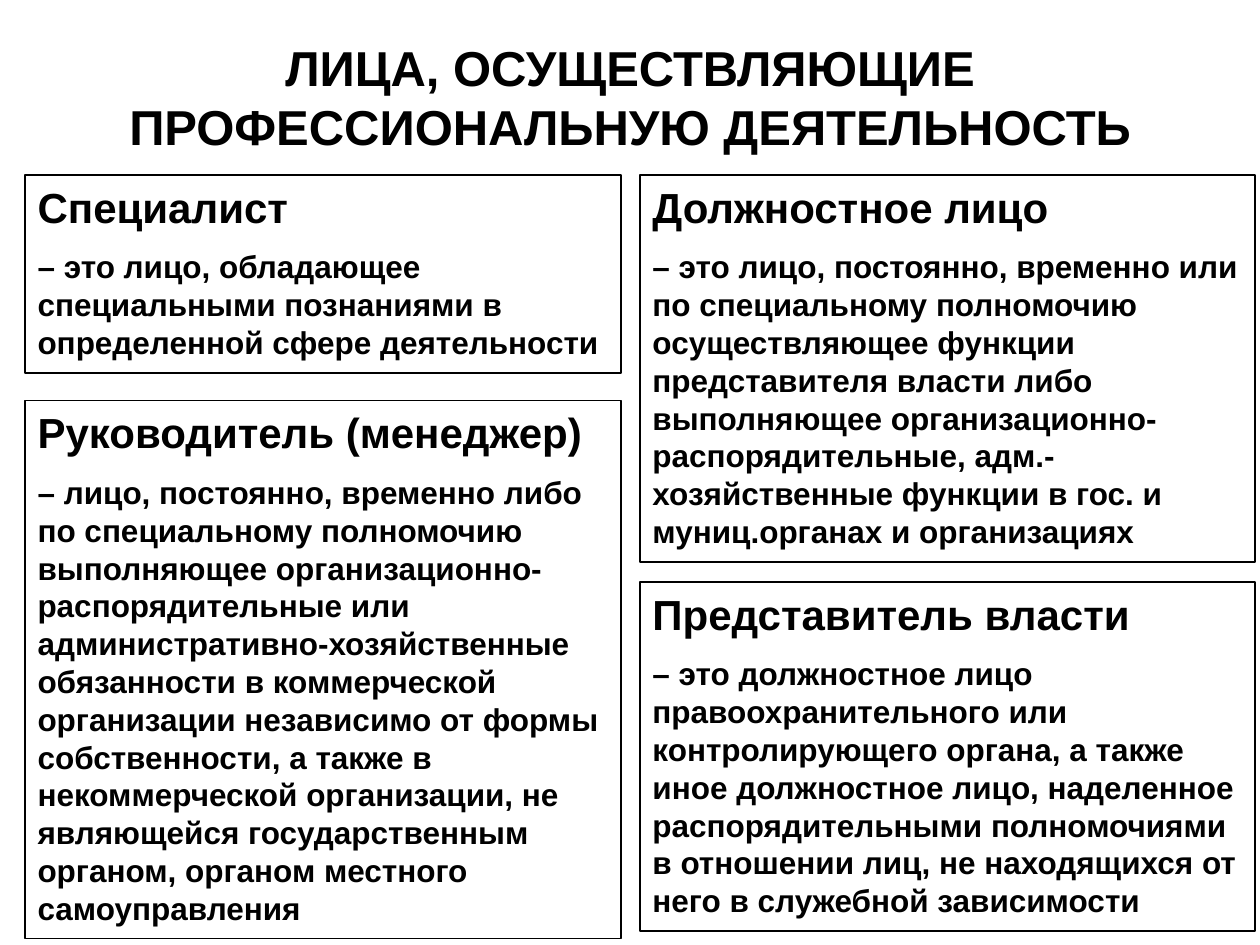
from pptx import Presentation
from pptx.dml.color import RGBColor
from pptx.enum.text import MSO_ANCHOR, PP_ALIGN
from pptx.util import Inches, Pt

BLACK = "000000"
TITLE = "ЛИЦА, ОСУЩЕСТВЛЯЮЩИЕ ПРОФЕССИОНАЛЬНУЮ ДЕЯТЕЛЬНОСТЬ"
LEFT_COLUMN = (0.2, 4.73)
RIGHT_COLUMN = (5.08, 4.88)
DEFINITIONS = [
    (LEFT_COLUMN, 1.39, 1.57, "Специалист",
     "– это лицо, обладающее специальными познаниями в определенной "
     "сфере деятельности"),
    (LEFT_COLUMN, 3.18, 4.27, "Руководитель (менеджер)",
     "– лицо, постоянно, временно либо по специальному полномочию "
     "выполняющее организационно-распорядительные или "
     "административно-хозяйственные обязанности в коммерческой "
     "организации независимо от формы собственности, а также в "
     "некоммерческой организации, не являющейся государственным органом, "
     "органом местного самоуправления"),
    (RIGHT_COLUMN, 1.39, 3.07, "Должностное лицо",
     "– это лицо, постоянно, временно или по специальному полномочию "
     "осуществляющее функции представителя власти либо выполняющее "
     "организационно-распорядительные, адм.-хозяйственные функции в гос. "
     "и муниц.органах и организациях"),
    (RIGHT_COLUMN, 4.62, 2.77, "Представитель власти",
     "– это должностное лицо правоохранительного или контролирующего "
     "органа, а также иное должностное лицо, наделенное распорядительными "
     "полномочиями в отношении лиц, не находящихся от него в служебной "
     "зависимости"),
]


def color(value):
    return RGBColor.from_string(value)


def set_attributes(target, values):
    for name, value in values.items():
        setattr(target, name, value)


def write(paragraph, text, size, **layout):
    run = paragraph.add_run()
    run.text = text
    set_attributes(run.font, {"name": "Arial", "size": Pt(size), "bold": True})
    run.font.color.rgb = color(BLACK)
    set_attributes(paragraph, layout)


def add_text_box(slide, box, anchor):
    shape = slide.shapes.add_textbox(*map(Inches, box))
    set_attributes(shape.text_frame,
                   {"word_wrap": True, "vertical_anchor": anchor})
    return shape


def add_title(slide, box):
    shape = add_text_box(slide, box, MSO_ANCHOR.MIDDLE)
    write(shape.text_frame.paragraphs[0], TITLE, 28, alignment=PP_ALIGN.CENTER)


def add_definition(slide, box, term, meaning):
    shape = add_text_box(slide, box, MSO_ANCHOR.TOP)
    shape.line.color.rgb = color(BLACK)
    shape.line.width = Pt(1)
    frame = shape.text_frame
    write(frame.paragraphs[0], term, 24)
    write(frame.add_paragraph(), meaning, 18, space_before=Pt(9))


def main():
    presentation = Presentation()
    set_attributes(presentation,
                   {"slide_width": Inches(10), "slide_height": Inches(7.5)})
    slide = presentation.slides.add_slide(presentation.slide_layouts[6])
    add_title(slide, (0.5, 0.3, 9, 0.93))
    for (left, width), top, height, term, meaning in DEFINITIONS:
        add_definition(slide, (left, top, width, height), term, meaning)
    presentation.save("out.pptx")


if __name__ == "__main__":
    main()
